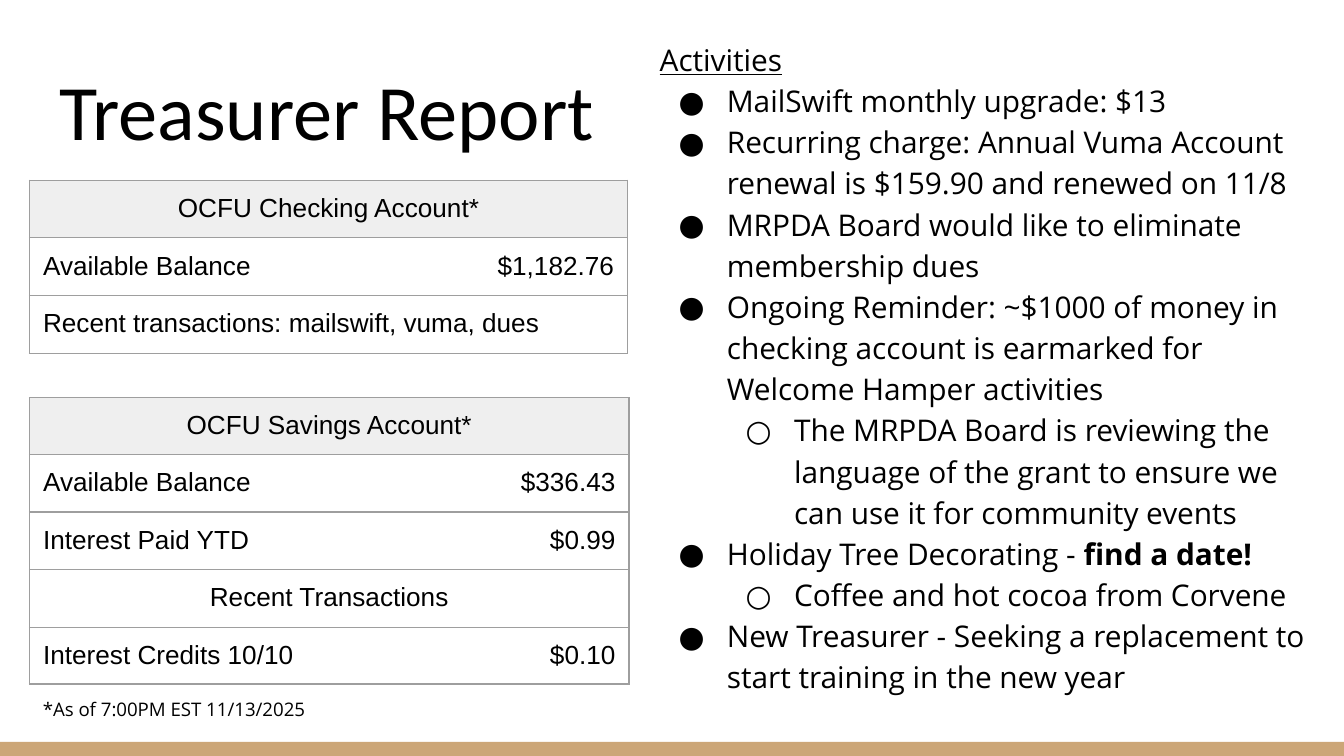
from lxml.etree import SubElement
from pptx import Presentation
from pptx.dml.color import RGBColor
from pptx.enum.shapes import MSO_SHAPE
from pptx.enum.text import MSO_ANCHOR, MSO_AUTO_SIZE, PP_ALIGN
from pptx.oxml.ns import qn
from pptx.util import Inches, Pt

BLACK = "000000"
MARGIN = Inches(0.1)
PLAIN_TABLE_STYLE = "{2D5ABB26-0587-4C30-8999-92F81FD0307C}"


def color(value):
    return RGBColor.from_string(value)


def style(paragraph, font_name, size):
    paragraph.font.name = font_name
    paragraph.font.size = Pt(size)
    paragraph.font.color.rgb = color(BLACK)


presentation = Presentation()
presentation.slide_width = Inches(10)
presentation.slide_height = presentation.slide_width * 9 // 16
slide = presentation.slides.add_slide(presentation.slide_layouts[5])

footer_bar = slide.shapes.add_shape(
    MSO_SHAPE.RECTANGLE, 0, Inches(5.52), Inches(10), Inches(0.11))
footer_bar.shadow.inherit = False
footer_bar.fill.solid()
footer_bar.fill.fore_color.rgb = color("CCA677")
footer_bar.line.fill.background()

title = slide.shapes.title
title.left, title.top = Inches(0.34), Inches(0.35)
title.width, title.height = Inches(9.32), Inches(0.91)
title_frame = title.text_frame
title_frame.text = "Treasurer Report"
title_frame.vertical_anchor = MSO_ANCHOR.BOTTOM
title_frame.auto_size = MSO_AUTO_SIZE.NONE
title_frame.margin_left = title_frame.margin_right = MARGIN
title_frame.margin_top = title_frame.margin_bottom = MARGIN
title_frame.paragraphs[0].alignment = PP_ALIGN.LEFT
style(title_frame.paragraphs[0], "Calibri", 42)

# Account tables: a row with one text spans both columns
savings = [["OCFU Savings Account*"], ["Available Balance", "$336.43"],
           ["Interest Paid YTD", "$0.99"], ["Recent Transactions"],
           ["Interest Credits 10/10", "$0.10"]]
checking = [["OCFU Checking Account*"], ["Available Balance", "$1,182.76"],
            ["Recent transactions: mailswift, vuma, dues"]]
centered = ["OCFU Savings Account*", "Recent Transactions", "OCFU Checking Account*"]

for top, column_widths, row_heights, rows in [
    (2.96, [3.37, 1.09], [0.42, 0.43, 0.43, 0.43, 0.42], savings),
    (1.34, [2.94, 1.51], [0.43] * 3, checking),
]:
    table = slide.shapes.add_table(
        len(rows), 2, Inches(0.22), Inches(top),
        Inches(sum(column_widths)), Inches(sum(row_heights))).table
    table.first_row = table.horz_banding = False
    table._tbl.tblPr.find(qn("a:tableStyleId")).text = PLAIN_TABLE_STYLE
    for column, width in zip(table.columns, column_widths):
        column.width = Inches(width)
    for row_index, texts in enumerate(rows):
        table.rows[row_index].height = Inches(row_heights[row_index])
        spans = len(texts) == 1
        if spans:
            table.cell(row_index, 0).merge(table.cell(row_index, 1))
        for column_index in range(2):
            cell = table.cell(row_index, column_index)
            cell.margin_left = cell.margin_right = MARGIN
            cell.margin_top = cell.margin_bottom = MARGIN
            sides = "LRTB" if spans else ["LTB", "RTB"][column_index]
            for side in sides:
                border = SubElement(cell._tc.get_or_add_tcPr(), qn(f"a:ln{side}"), w=str(Pt(0.75)))
                SubElement(SubElement(border, qn("a:solidFill")), qn("a:srgbClr"), val="9E9E9E")
            if row_index == 0:
                cell.fill.solid()
                cell.fill.fore_color.rgb = color("EFEFEF")
            else:
                cell.fill.background()
            if column_index < len(texts):
                cell.text = texts[column_index]
                paragraph = cell.text_frame.paragraphs[0]
                style(paragraph, "Arial", 14)
                if cell.text in centered:
                    paragraph.alignment = PP_ALIGN.CENTER
                elif column_index == 1:
                    paragraph.alignment = PP_ALIGN.RIGHT

# Text boxes: (indent level or None, text, bold ending)
activities = [
    (None, "Activities", ""),
    (0, "MailSwift monthly upgrade: $13", ""),
    (0, "Recurring charge: Annual Vuma Account renewal is $159.90 and renewed on 11/8", ""),
    (0, "MRPDA Board would like to eliminate membership dues", ""),
    (0, "Ongoing Reminder: ~$1000 of money in checking account is earmarked for "
        "Welcome Hamper activities", ""),
    (1, "The MRPDA Board is reviewing the language of the grant to ensure we "
        "can use it for community events", ""),
    (0, "Holiday Tree Decorating - ", "find a date!"),
    (1, "Coffee and hot cocoa from Corvene", ""),
    (0, "New Treasurer - Seeking a replacement to start training in the new year", ""),
]
note = [(None, "*As of 7:00PM EST 11/13/2025", "")]

for left, top, width, height, size, spacing, fit, lines in [
    (0.22, 5.11, 3.55, 0.37, 10, 1, MSO_AUTO_SIZE.SHAPE_TO_FIT_TEXT, note),
    (4.81, 0.17, 5.19, 5.29, 16, 1.15, MSO_AUTO_SIZE.NONE, activities),
]:
    box = slide.shapes.add_textbox(Inches(left), Inches(top), Inches(width), Inches(height))
    frame = box.text_frame
    frame.word_wrap = True
    frame.auto_size = fit
    frame.margin_left = frame.margin_right = MARGIN
    frame.margin_top = frame.margin_bottom = MARGIN
    for index, (level, text, bold_ending) in enumerate(lines):
        paragraph = frame.add_paragraph() if index else frame.paragraphs[0]
        paragraph.line_spacing = spacing
        style(paragraph, "Open Sans", size)
        run = paragraph.add_run()
        run.text = text
        if text == "Activities":
            run.font.underline = True
        if bold_ending:
            ending = paragraph.add_run()
            ending.text = bold_ending
            ending.font.bold = True
        if level is not None:
            paragraph.level = level
            properties = paragraph._p.get_or_add_pPr()
            properties.set("marL", str(Inches(0.5 * (level + 1))))
            properties.set("indent", str(Inches(-0.36)))
            defaults = properties.find(qn("a:defRPr"))
            for tag, attributes in [
                ("a:buSzPts", {"val": str(size * 100)}),
                ("a:buFont", {"typeface": "Open Sans"}),
                ("a:buChar", {"char": "●○"[level]}),
            ]:
                defaults.addprevious(properties.makeelement(qn(tag), attributes))

presentation.save("out.pptx")
